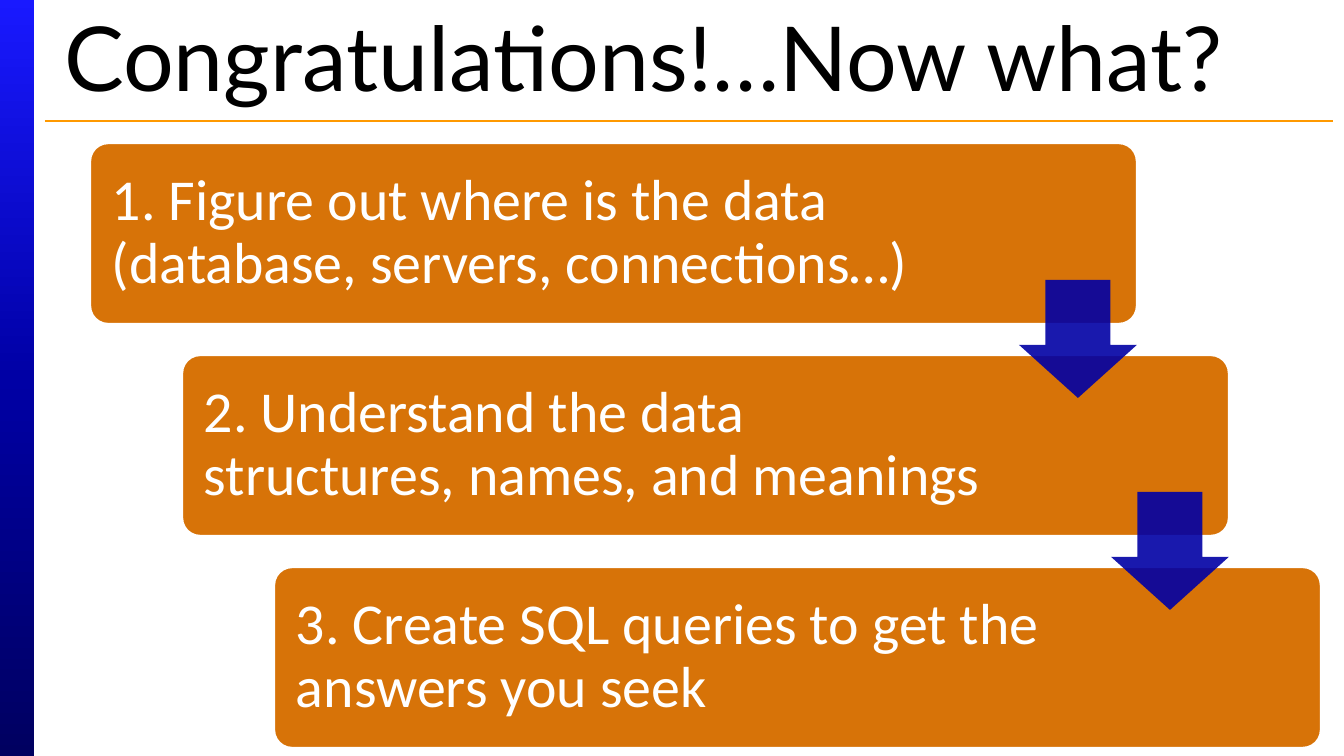
"""Builds a slide with three cascading steps joined by arrows."""
from lxml import etree
from pptx import Presentation
from pptx.dml.color import RGBColor
from pptx.enum.shapes import MSO_CONNECTOR, MSO_SHAPE
from pptx.enum.text import MSO_ANCHOR
from pptx.oxml.ns import qn
from pptx.util import Emu, Pt

RECT = MSO_SHAPE.RECTANGLE
ROUNDED = MSO_SHAPE.ROUNDED_RECTANGLE
DOWN_ARROW = MSO_SHAPE.DOWN_ARROW
STRAIGHT = MSO_CONNECTOR.STRAIGHT
MIDDLE = MSO_ANCHOR.MIDDLE

SCALE = 9144000 / 1344
COLORS = {
    "white": "FFFFFF",
    "black": "000000",
    "orange": "D77308",
    "rule": "FF9900",
    "navy": "0000A5",
    "bar_top": "1919FF",
    "bar_bottom": "000060",
}
STEPS = [
    ("1. Figure out where is the data\n(database, servers, connections…)", 851),
    ("2. Understand the data structures, names, and meanings", 827),
    ("3. Create SQL queries to get the answers you seek", 827),
]
STEP_DX, STEP_DY = 92, 212


def px(*lengths):
    return [Emu(round(n * SCALE)) for n in lengths]


def rgb(name):
    return RGBColor.from_string(COLORS[name])


def write(tf, text, font="Calibri", size=31, color="white", spacing=None):
    p = tf.paragraphs[0]
    p.text = text
    p.line_spacing = spacing
    for r in p.runs:
        r.font.name = font
        r.font.size = Pt(size)
        r.font.color.rgb = rgb(color)


class Deck:
    def __init__(self):
        self.prs = Presentation()
        self.prs.slide_width, self.prs.slide_height = px(1344, 756)
        self.s = self.prs.slides.add_slide(self.prs.slide_layouts[6])

    def shape(self, kind, x, y, w, h, fill=None, line=None, adj=(), alpha=None):
        sp = self.s.shapes.add_shape(kind, *px(x, y, w, h))
        sp.shadow.inherit = False
        for i, value in enumerate(adj):
            sp.adjustments[i] = value
        if fill:
            sp.fill.solid()
            sp.fill.fore_color.rgb = rgb(fill)
        if alpha:
            clr = sp._element.spPr.find(qn("a:solidFill"))[0]
            etree.SubElement(clr, qn("a:alpha"), val=str(alpha * 1000))
        if line:
            sp.line.color.rgb = rgb(line)
            sp.line.width = Pt(1.25)
        else:
            sp.line.fill.background()
        return sp

    def gradient_bar(self, x, y, w, h, stops):
        sp = self.shape(RECT, x, y, w, h)
        sp.fill.gradient()
        sp.fill.gradient_angle = 270
        gs_list = sp._element.spPr.find(qn("a:gradFill")).find(qn("a:gsLst"))
        gs_list.clear()
        for pos, color in stops:
            gs = etree.SubElement(gs_list, qn("a:gs"), pos=str(pos * 1000))
            etree.SubElement(gs, qn("a:srgbClr"), val=COLORS[color])

    def rule(self, x1, y1, x2, y2):
        line = self.s.shapes.add_connector(STRAIGHT, *px(x1, y1, x2, y2))
        line.line.color.rgb = rgb("rule")
        line.line.width = Pt(0.75)
        etree.SubElement(line._element.spPr, qn("a:effectLst"))

    def text(self, x, y, w, h, text, inset=None, **style):
        tf = self.s.shapes.add_textbox(*px(x, y, w, h)).text_frame
        tf.word_wrap = True
        tf.vertical_anchor = MIDDLE
        if inset:
            tf.margin_left, tf.margin_top, tf.margin_right, tf.margin_bottom = px(*[inset] * 4)
        write(tf, text, **style)

    def step(self, x, y, text, text_width):
        self.shape(ROUNDED, x, y, 1047, 181, "orange", "white", [0.1])
        self.text(x + 5, y + 5, text_width, 171, text, inset=17, spacing=0.9)

    def arrow(self, x, y):
        self.shape(DOWN_ARROW, x, y, 118, 118, "navy", adj=[0.55, 0.45], alpha=90)


def main():
    deck = Deck()
    deck.gradient_bar(0, 0, 34, 756, [(0, "bar_top"), (50, "navy"), (100, "bar_bottom")])
    deck.rule(45, 121, 1333, 121)
    deck.text(51, 20, 1288, 71, "Congratulations!…Now what?",
              font="Lato", size=48, color="black")
    for i, (text, width) in enumerate(STEPS):
        deck.step(90 + i * STEP_DX, 143 + i * STEP_DY, text, width)
    for i in range(len(STEPS) - 1):
        deck.arrow(1019 + i * STEP_DX, 280 + i * STEP_DY)
    deck.prs.save("out.pptx")


if __name__ == "__main__":
    main()
